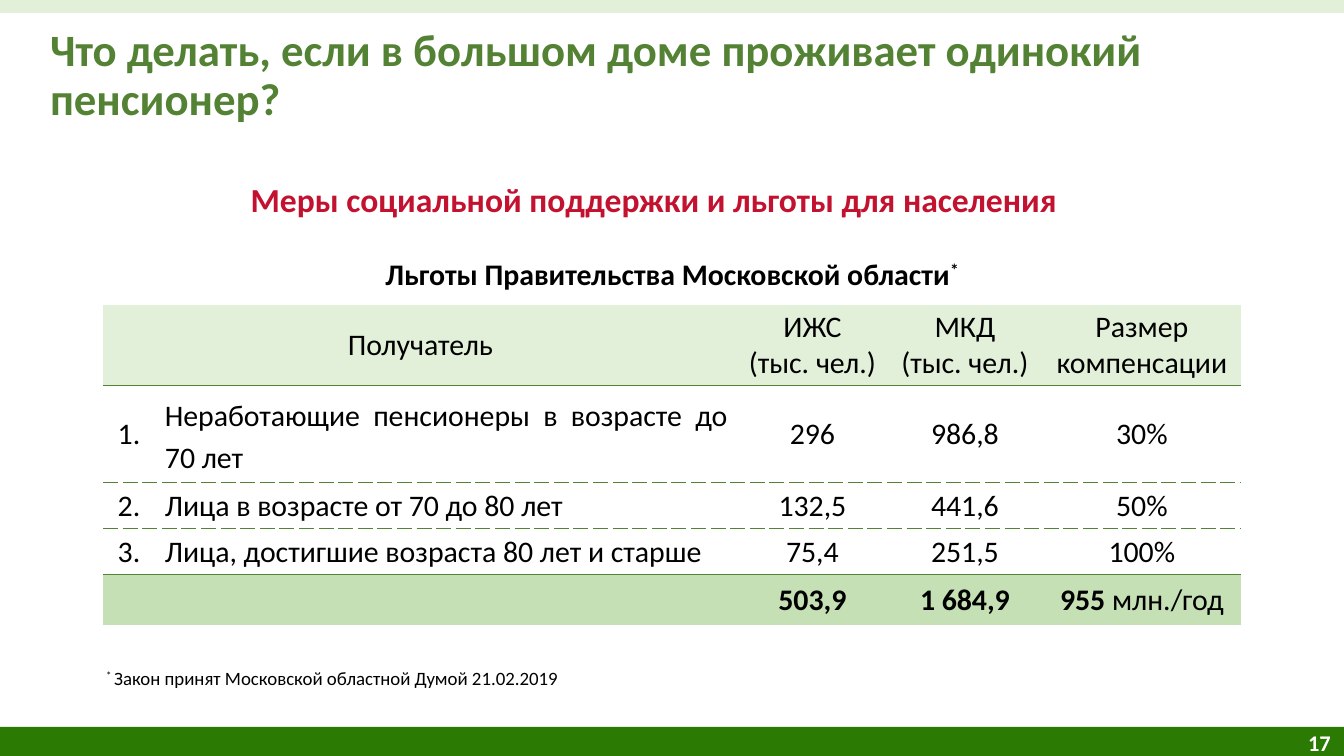
from dataclasses import dataclass

from lxml import etree
from pptx import Presentation, util as u
from pptx.dml.color import RGBColor
from pptx.enum import shapes, text
from pptx.oxml.ns import qn

PX = 914400 / 134.4  # EMU in one px
LEFT, MID, RIGHT, JUST = (text.PP_ALIGN.LEFT, text.PP_ALIGN.CENTER,
                          text.PP_ALIGN.RIGHT, text.PP_ALIGN.JUSTIFY)


@dataclass
class Theme:
    font: str = "Calibri"
    dark: str = "2A7A03"
    green: str = "548235"
    pale: str = "E2F0D9"
    soft: str = "C5E0B4"
    red: str = "C3122F"
    black: str = "000000"
    white: str = "FFFFFF"
    title: float = 24
    head: float = 18
    cell: float = 16
    page: float = 12
    note: float = 10.1


def px(*vals):
    return [u.Emu(round(v * PX)) for v in vals]


def write(frame, lines, font="Calibri", size=16, color="000000", bold=False,
          align=LEFT, space=None):
    """Each line is a string or a list of (text, format) runs."""
    for i, line in enumerate(lines):
        par = frame.paragraphs[0] if i == 0 else frame.add_paragraph()
        par.alignment = align
        if space:
            par.line_spacing = space
        for words, form in [(line, {})] if isinstance(line, str) else line:
            run = par.add_run()
            run.text = words
            run.font.name = font
            run.font.size = u.Pt(size)
            run.font.bold = form.get("bold", bold)
            run.font.color.rgb = RGBColor.from_string(color)
            if form.get("sup"):
                run.font._element.set("baseline", "30000")


def border(cell, **sides):
    """Draw the named sides as (color, points, dash); clear the others."""
    props = cell._tc.get_or_add_tcPr()
    for spot, side in enumerate("LRTB"):
        line = etree.Element(qn("a:ln" + side))
        if side in sides:
            color, width, dash = sides[side]
            line.set("w", str(u.Pt(width)))
            fill = etree.SubElement(line, qn("a:solidFill"))
            etree.SubElement(fill, qn("a:srgbClr"), val=color)
            etree.SubElement(line, qn("a:prstDash"), val=dash)
        else:
            line.set("w", "0")
            etree.SubElement(line, qn("a:noFill"))
        props.insert(spot, line)


class Deck:
    def __init__(self, theme):
        self.theme = theme
        self.file = Presentation()
        self.file.slide_width, self.file.slide_height = px(1344, 756)
        self.slide = self.file.slides.add_slide(self.file.slide_layouts[5])

    def bar(self, box, color):
        shape = self.slide.shapes.add_shape(shapes.MSO_SHAPE.RECTANGLE, *px(*box))
        shape.shadow.inherit = False
        shape.fill.solid()
        shape.fill.fore_color.rgb = RGBColor.from_string(color)
        shape.line.fill.background()

    def title(self, box, words):
        shape = self.slide.shapes.title
        shape.left, shape.top, shape.width, shape.height = px(*box)
        frame = shape.text_frame
        frame.margin_left = frame.margin_right = 0
        frame.margin_top = frame.margin_bottom = 0
        frame.word_wrap = True
        frame.auto_size = text.MSO_AUTO_SIZE.NONE
        frame.vertical_anchor = text.MSO_ANCHOR.TOP
        write(frame, [words], size=self.theme.title, color=self.theme.green,
              bold=True, space=0.9)

    def label(self, box, line, anchor=text.MSO_ANCHOR.TOP, **form):
        frame = self.slide.shapes.add_textbox(*px(*box)).text_frame
        frame.word_wrap = True
        frame.vertical_anchor = anchor
        write(frame, [line], font=self.theme.font, **form)

    def table(self, spot, cols, rows):
        box = (*spot, sum(cols), sum(rows))
        grid = self.slide.shapes.add_table(len(rows), len(cols), *px(*box)).table
        grid.first_row = grid.horz_banding = False
        for col, wide in zip(grid.columns, px(*cols)):
            col.width = wide
        for row, high in zip(grid.rows, px(*rows)):
            row.height = high
        return grid

    def cell(self, cell, lines, fill=None, **form):
        cell.vertical_anchor = text.MSO_ANCHOR.MIDDLE
        cell.margin_left, cell.margin_right = px(10, 10)
        cell.margin_top, cell.margin_bottom = px(4, 4) if lines else (0, 0)
        if fill:
            cell.fill.solid()
            cell.fill.fore_color.rgb = RGBColor.from_string(fill)
        else:
            cell.fill.background()
        write(cell.text_frame, lines, font=self.theme.font,
              size=self.theme.cell, color=self.theme.black, **form)


def main():
    look = Theme()
    deck = Deck(look)

    # Bars and page number
    deck.bar((0, 727, 1344, 29), look.dark)
    deck.label((1004, 716, 340, 54), "17", anchor=text.MSO_ANCHOR.MIDDLE,
               size=look.page, color=look.white, bold=True, align=RIGHT)
    deck.bar((0, 0, 1344, 13), look.pale)

    # Headings
    deck.title((50, 28, 1268, 98),
               "Что делать, если в большом доме проживает одинокий пенсионер?")
    deck.label((126, 172, 1056, 54),
               "Меры социальной поддержки и льготы для населения",
               size=look.head, color=look.red, bold=True, align=MID)

    # Benefits table
    solid, dash = (look.green, 0.75, "solid"), (look.green, 0.75, "dash")
    edge = (look.white, 1, "solid")
    unit = "(тыс. чел.)"
    data = [
        [[[("Льготы Правительства Московской области", {"bold": True}),
           ("*", {"bold": True, "sup": True})]], [], [], [], []],
        [["Получатель"], [], ["ИЖС", unit], ["МКД", unit], ["Размер компенсации"]],
        [["1."], ["Неработающие пенсионеры в возрасте до 70 лет"],
         ["296"], ["986,8"], ["30%"]],
        [["2."], ["Лица в возрасте от 70 до 80 лет"], ["132,5"], ["441,6"], ["50%"]],
        [["3."], ["Лица, достигшие возраста 80 лет и старше"],
         ["75,4"], ["251,5"], ["100%"]],
        [[], [], [[("503,9", {"bold": True})]], [[("1 684,9", {"bold": True})]],
         [[("955 ", {"bold": True}), ("млн./год", {})]]],
    ]
    fills = [None, look.pale, look.white, look.white, look.white, look.soft]
    lines = [dict(L=edge, T=edge, R=edge), dict(B=solid), dict(T=solid, B=dash),
             dict(T=dash, B=dash), dict(T=dash, B=solid), dict(T=solid)]
    grid = deck.table((103, 245), (52, 583, 149, 156, 198),
                      (60, 81, 97, 46, 46, 50))
    for r, row in enumerate(data):
        for c, words in enumerate(row):
            form = dict(align=MID)
            if c == 1:
                form = dict(align=JUST, space=1.15) if r == 2 else dict(align=LEFT)
            deck.cell(grid.cell(r, c), words, fills[r], **form)
            border(grid.cell(r, c), **lines[r])
    grid.cell(0, 0).merge(grid.cell(0, 4))
    grid.cell(1, 0).merge(grid.cell(1, 1))

    # Footnote
    deck.label((93, 660, 1184, 36),
               [("* ", {"sup": True}),
                ("Закон принят Московской областной Думой 21.02.2019", {})],
               size=look.note, color=look.black)

    deck.file.save("out.pptx")


if __name__ == "__main__":
    main()
